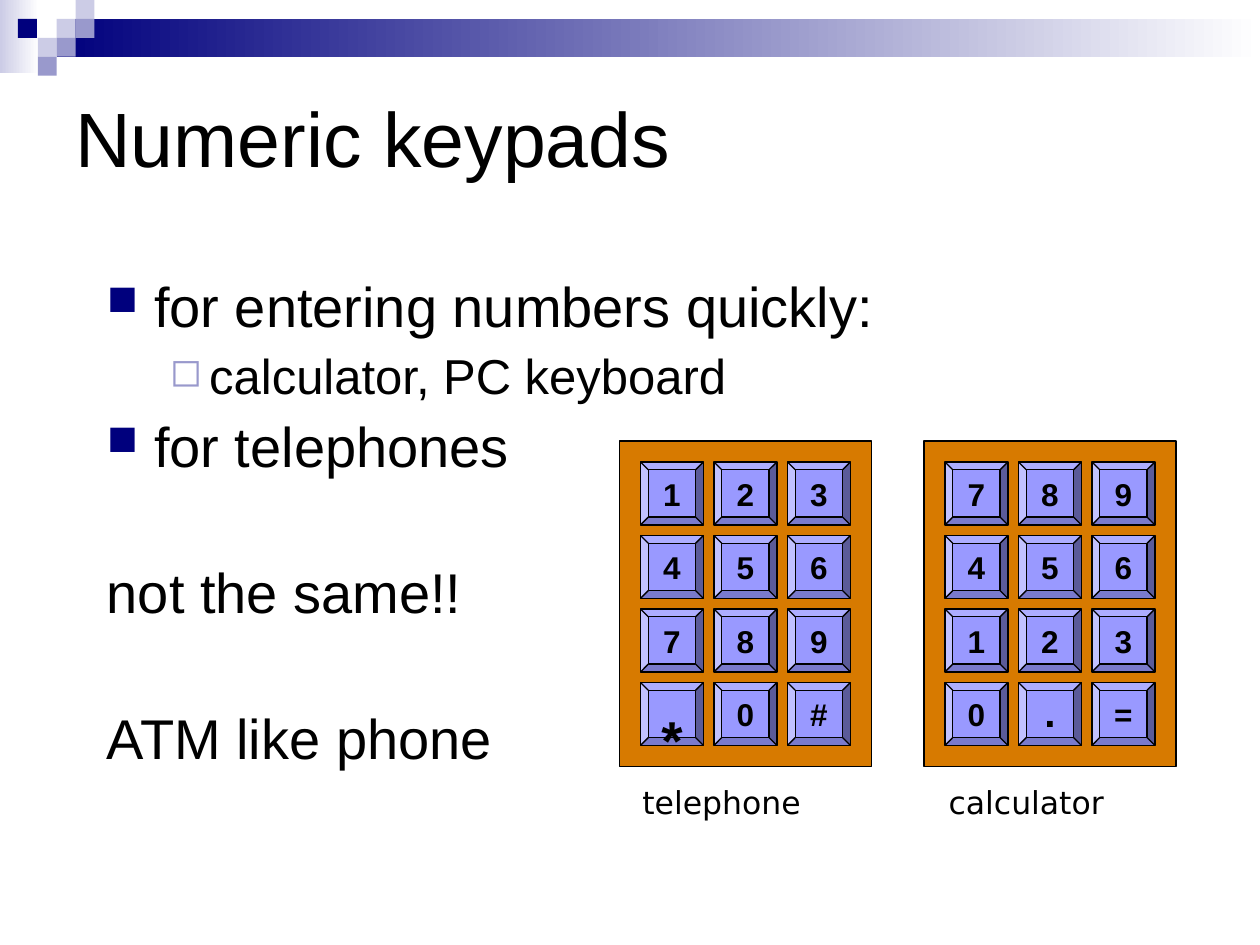
from dataclasses import dataclass

from lxml import etree
from pptx import Presentation
from pptx.dml.color import RGBColor
from pptx.enum.shapes import MSO_SHAPE
from pptx.enum.text import MSO_ANCHOR, PP_ALIGN
from pptx.oxml.ns import qn
from pptx.shapes.autoshape import Shape
from pptx.shapes.shapetree import GroupShapes
from pptx.slide import Slide
from pptx.text.text import _Paragraph as Paragraph
from pptx.util import Pt

RECTANGLE, BEVEL = MSO_SHAPE.RECTANGLE, MSO_SHAPE.BEVEL
TOP, MIDDLE = MSO_ANCHOR.TOP, MSO_ANCHOR.MIDDLE
CENTER = PP_ALIGN.CENTER

BLACK = RGBColor(0x00, 0x00, 0x00)
WHITE = RGBColor(0xFF, 0xFF, 0xFF)
NAVY = RGBColor(0x00, 0x00, 0x7D)
LAVENDER = RGBColor(0x99, 0x99, 0xCC)
PALE = RGBColor(0xCC, 0xCC, 0xE6)
KEY_BLUE = RGBColor(0x99, 0x99, 0xFF)
ORANGE = RGBColor(0xD7, 0x7A, 0x00)

TILE = 10.8
KEY_SIZE, KEY_PITCH, PANEL_MARGIN = 36, 42, 12
PANEL_TOP, PANEL_WIDTH, PANEL_HEIGHT = 252, 144, 186


@dataclass(frozen=True)
class Rect:
    left: float
    top: float
    width: float
    height: float

    def lengths(self) -> tuple[Pt, ...]:
        return tuple(Pt(v) for v in (self.left, self.top, self.width, self.height))


@dataclass(frozen=True)
class Tile:
    column: float
    row: int
    color: RGBColor


@dataclass(frozen=True)
class Bullet:
    symbol: str
    color: RGBColor
    percent: int


@dataclass(frozen=True)
class BodyLine:
    text: str
    size: float
    before: float
    indent: float
    hanging: float
    level: int = 0
    bullet: Bullet | None = None


@dataclass(frozen=True)
class Keypad:
    name: str
    left: float
    label_left: float
    rows: tuple[str, ...]


@dataclass(frozen=True)
class KeyStyle:
    size: float = 18
    baseline: int = 0


SQUARE = Bullet("■", NAVY, 75)
HOLLOW = Bullet("◻", LAVENDER, 80)
TILES = (
    Tile(3, 1, PALE),
    Tile(4, 0, PALE),
    Tile(4, 1, LAVENDER),
    Tile(2, 2, PALE),
    Tile(0.95, 1, NAVY),
    Tile(3, 2, LAVENDER),
    Tile(2, 3, LAVENDER),
)
BODY = (
    BodyLine("for entering numbers quickly:", 32, 8, 27, -27, bullet=SQUARE),
    BodyLine("calculator, PC keyboard", 28, 7, 58.5, -22.5, 1, HOLLOW),
    BodyLine("for telephones", 32, 8, 27, -27, bullet=SQUARE),
    BodyLine("not the same!!", 32, 49, 27, -27),
    BodyLine("ATM like phone", 32, 49, 27, -27),
)
KEYPADS = (
    Keypad("telephone", 354, 360, ("123", "456", "789", "*0#")),
    Keypad("calculator", 528, 535, ("789", "456", "123", "0.=")),
)
KEY_STYLES = {"*": KeyStyle(54, -10), ".": KeyStyle(40, 20)}


def add_block(shapes: GroupShapes, rect: Rect, color: RGBColor,
              outlined: bool = False, kind: MSO_SHAPE = RECTANGLE) -> Shape:
    block = shapes.add_shape(kind, *rect.lengths())
    block.shadow.inherit = False
    block.fill.solid()
    block.fill.fore_color.rgb = color
    if outlined:
        block.line.color.rgb = BLACK
        block.line.width = Pt(0.75)
    else:
        block.line.fill.background()
    return block


def add_fade(shapes: GroupShapes, rect: Rect, color: RGBColor) -> None:
    """Draw a bar that fades from color to white, left to right."""
    fill = add_block(shapes, rect, color).fill
    fill.gradient()
    fill.gradient_angle = 0
    for stop, shade in zip(fill.gradient_stops, (color, WHITE)):
        stop.color.rgb = shade


def write(para: Paragraph, text: str, size: float, font: str = "Arial",
          bold: bool = False, baseline: int = 0) -> None:
    span = para.add_run()
    span.text = text
    for name, value in {"name": font, "size": Pt(size), "bold": bold}.items():
        setattr(span.font, name, value)
    span.font.color.rgb = BLACK
    if baseline:
        span._r.get_or_add_rPr().set("baseline", str(baseline * 1000))


def set_bullet(para: Paragraph, bullet: Bullet | None) -> None:
    properties = para._p.get_or_add_pPr()
    if bullet is None:
        etree.SubElement(properties, qn("a:buNone"))
        return
    color = etree.SubElement(properties, qn("a:buClr"))
    etree.SubElement(color, qn("a:srgbClr"), val=str(bullet.color))
    etree.SubElement(properties, qn("a:buSzPct"), val=str(bullet.percent * 1000))
    etree.SubElement(properties, qn("a:buChar"), char=bullet.symbol)


def add_text_box(page: Slide, rect: Rect, anchor: MSO_ANCHOR = TOP,
                 wrap: bool = True) -> Shape:
    box = page.shapes.add_textbox(*rect.lengths())
    box.text_frame.word_wrap = wrap
    box.text_frame.vertical_anchor = anchor
    return box


def add_body(page: Slide) -> None:
    frame = add_text_box(page, Rect(54, 156, 612, 318)).text_frame
    for index, line in enumerate(BODY):
        para = frame.add_paragraph() if index else frame.paragraphs[0]
        formats = {"level": line.level, "line_spacing": 0.9, "space_before": Pt(line.before)}
        for name, value in formats.items():
            setattr(para, name, value)
        properties = para._p.get_or_add_pPr()
        properties.set("marL", str(Pt(line.indent)))
        properties.set("indent", str(Pt(line.hanging)))
        set_bullet(para, line.bullet)
        write(para, line.text, line.size)


def add_key(shapes: GroupShapes, left: float, top: float, symbol: str) -> None:
    key = add_block(shapes, Rect(left, top, KEY_SIZE, KEY_SIZE), KEY_BLUE, True, BEVEL)
    key.adjustments[0] = 0.125
    frame = key.text_frame
    frame.word_wrap = False
    frame.vertical_anchor = MIDDLE
    para = frame.paragraphs[0]
    para.alignment = CENTER
    style = KEY_STYLES.get(symbol, KeyStyle())
    write(para, symbol, style.size, bold=True, baseline=style.baseline)


def add_keypad(page: Slide, keypad: Keypad) -> None:
    shapes = page.shapes.add_group_shape().shapes
    add_block(shapes, Rect(keypad.left, PANEL_TOP, PANEL_WIDTH, PANEL_HEIGHT), ORANGE, True)
    for row, symbols in enumerate(keypad.rows):
        for column, symbol in enumerate(symbols):
            add_key(shapes, keypad.left + PANEL_MARGIN + column * KEY_PITCH,
                    PANEL_TOP + PANEL_MARGIN + row * KEY_PITCH, symbol)
    label = add_text_box(page, Rect(keypad.label_left, 444, 132, 36.5), wrap=False)
    write(label.text_frame.paragraphs[0], keypad.name, 18, "DejaVu Sans")


def add_banner(page: Slide) -> None:
    shapes = page.shapes.add_group_shape().shapes
    add_fade(shapes, Rect(0, 0, 22.3, 41.8), PALE)
    add_fade(shapes, Rect(3 * TILE, TILE, 720 - 3 * TILE, 2 * TILE), NAVY)
    for tile in TILES:
        add_block(shapes, Rect(tile.column * TILE, tile.row * TILE, TILE, TILE), tile.color)


def main() -> None:
    deck = Presentation()
    deck.slide_width, deck.slide_height = Pt(720), Pt(540)
    page = deck.slides.add_slide(deck.slide_layouts[6])
    add_banner(page)
    title = add_text_box(page, Rect(36, 36, 648, 84), MIDDLE)
    write(title.text_frame.paragraphs[0], "Numeric keypads", 44)
    add_body(page)
    for keypad in KEYPADS:
        add_keypad(page, keypad)
    deck.save("out.pptx")


if __name__ == "__main__":
    main()
